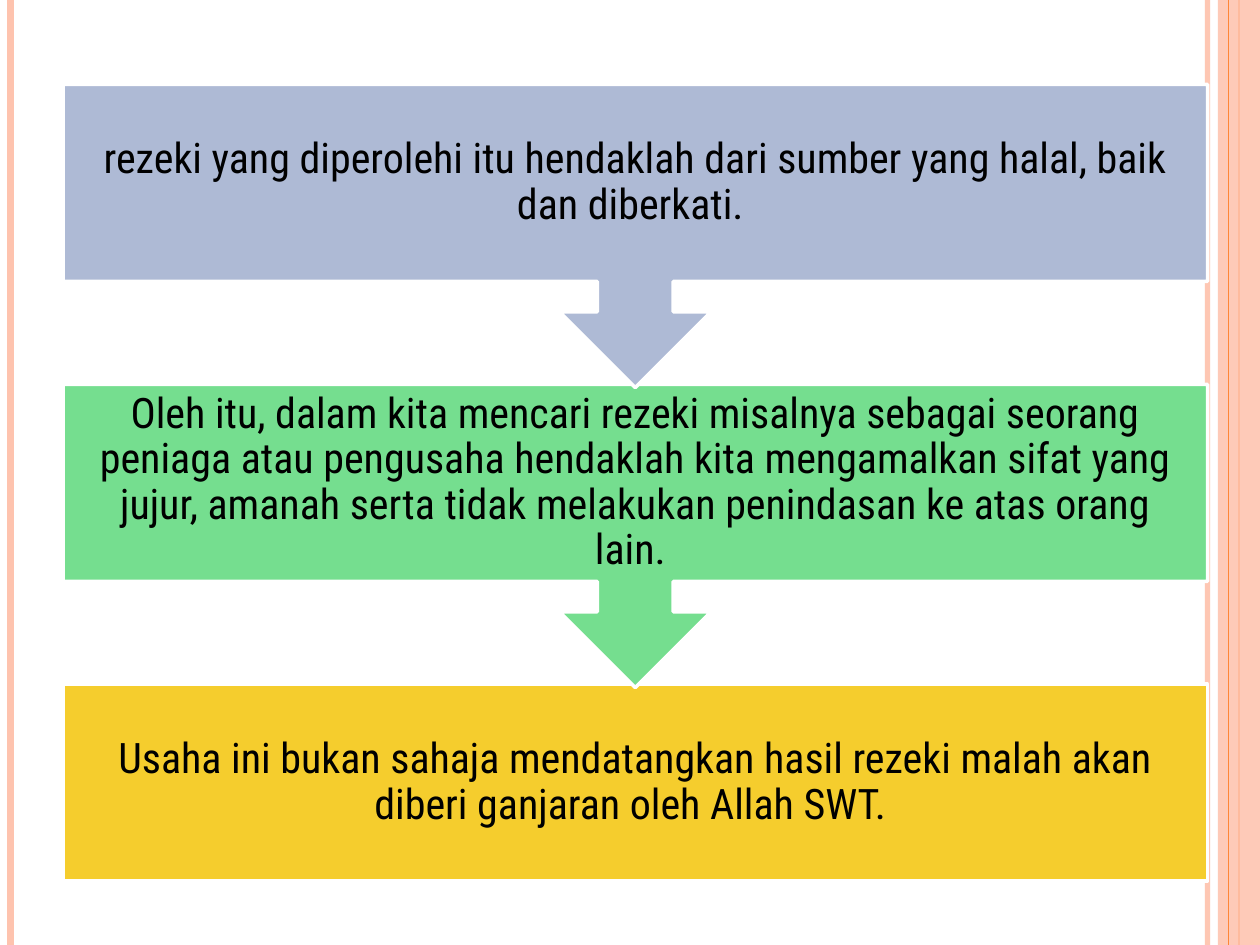
from dataclasses import dataclass

from pptx import Presentation
from pptx.dml.color import RGBColor
from pptx.enum.shapes import MSO_CONNECTOR, MSO_SHAPE
from pptx.enum.text import MSO_ANCHOR, PP_ALIGN
from pptx.oxml.ns import qn
from pptx.util import Pt
from lxml import etree

STRAIGHT = MSO_CONNECTOR.STRAIGHT
RECTANGLE = MSO_SHAPE.RECTANGLE
ARROW_CALLOUT = MSO_SHAPE.UP_ARROW_CALLOUT
MIDDLE = MSO_ANCHOR.MIDDLE
CENTER = PP_ALIGN.CENTER


@dataclass(frozen=True)
class Theme:
    font: str = "Roboto Condensed"
    text_size: float = 24
    text: str = "000000"
    outline: str = "FFFFFF"
    outline_width: float = 2
    stripe: str = "FEC3AE"
    accent: str = "FE8637"


THEME = Theme()
WIDTH, HEIGHT = 720, 540

STEPS = [
    ("rezeki yang diperolehi itu hendaklah dari sumber yang halal, baik dan diberkati. ", "AEBAD5"),
    ("Oleh itu, dalam kita mencari rezeki misalnya sebagai seorang peniaga atau pengusaha "
     "hendaklah kita mengamalkan sifat yang jujur, amanah serta tidak melakukan penindasan "
     "ke atas orang lain. ", "75DE8F"),
    ("Usaha ini bukan sahaja mendatangkan hasil rezeki malah akan diberi ganjaran oleh "
     "Allah SWT. ", "F5CD2D"),
]


def set_opacity(fill_parent, percent):
    """Make the solid fill found under an element partly transparent."""
    color = fill_parent.find(".//" + qn("a:srgbClr"))
    etree.SubElement(color, qn("a:alpha")).set("val", str(percent * 1000))


def add_shape(slide, kind, box, fill, outline=None):
    shape = slide.shapes.add_shape(kind, *(Pt(value) for value in box))
    shape.shadow.inherit = False
    shape.fill.solid()
    shape.fill.fore_color.rgb = RGBColor.from_string(fill)
    if outline:
        shape.line.color.rgb = RGBColor.from_string(outline)
        shape.line.width = Pt(THEME.outline_width)
        etree.SubElement(shape.line._get_or_add_ln(), qn("a:round"))
    else:
        shape.line.fill.background()
    return shape


def add_vertical_line(slide, x, top, height, color, width):
    line = slide.shapes.add_connector(STRAIGHT, Pt(x), Pt(top), Pt(x), Pt(top + height))
    line.line.color.rgb = RGBColor.from_string(color)
    line.line.width = Pt(width)
    etree.SubElement(line._element.spPr, qn("a:effectLst"))
    return line


def add_text(slide, text, box, size=THEME.text_size, color=THEME.text, margin=13.5,
             line_spacing=0.9):
    text_box = slide.shapes.add_textbox(*(Pt(value) for value in box))
    frame = text_box.text_frame
    frame.word_wrap = True
    frame.vertical_anchor = MIDDLE
    frame.margin_left = frame.margin_right = Pt(margin)
    frame.margin_top = frame.margin_bottom = Pt(margin)
    paragraph = frame.paragraphs[0]
    paragraph.alignment = CENTER
    paragraph.line_spacing = line_spacing
    run = paragraph.add_run()
    run.text = text
    run.font.name = THEME.font
    run.font.size = Pt(size)
    run.font.color.rgb = RGBColor.from_string(color)


def add_border(slide, box):
    """Stripes along the left and right edges of the box."""
    left, top, width, height = box
    right = left + width
    inner = add_vertical_line(slide, right - 30, top, height, THEME.stripe, 3)
    set_opacity(inner._element.spPr, 93)
    add_vertical_line(slide, left + 6, top, height, THEME.stripe, 4.5)
    add_vertical_line(slide, right - 12, top, height, THEME.accent, 1.5)
    band = add_shape(slide, RECTANGLE, (right - 24, top, 24, height), THEME.stripe)
    set_opacity(band._element.spPr, 87)
    add_vertical_line(slide, right - 18, top, height, THEME.accent, 0.75)


def add_process(slide, box, steps):
    """Stacked steps, each but the last pointing down to the next."""
    left, top, width, height = box
    body_height = 112.6
    callout_height = 173.3
    pitch = (height - body_height) / (len(steps) - 1)
    last = len(steps) - 1
    # The lowest step goes at the back so the arrow tips stay visible
    for index, (text, color) in reversed(list(enumerate(steps))):
        step_top = top + index * pitch
        body = (left, step_top, width, body_height)
        if index == last:
            add_shape(slide, RECTANGLE, body, color, THEME.outline)
        else:
            callout_box = (left, step_top, width, callout_height)
            callout = add_shape(slide, ARROW_CALLOUT, callout_box, color, THEME.outline)
            callout.rotation = 180
        add_text(slide, text, body)


def main():
    presentation = Presentation()
    presentation.slide_width, presentation.slide_height = Pt(WIDTH), Pt(HEIGHT)
    slide = presentation.slides.add_slide(presentation.slide_layouts[6])
    add_border(slide, (0, 0, WIDTH, HEIGHT))
    add_process(slide, (36, 48.2, 654, 455.4), STEPS)
    presentation.save("out.pptx")


if __name__ == "__main__":
    main()
